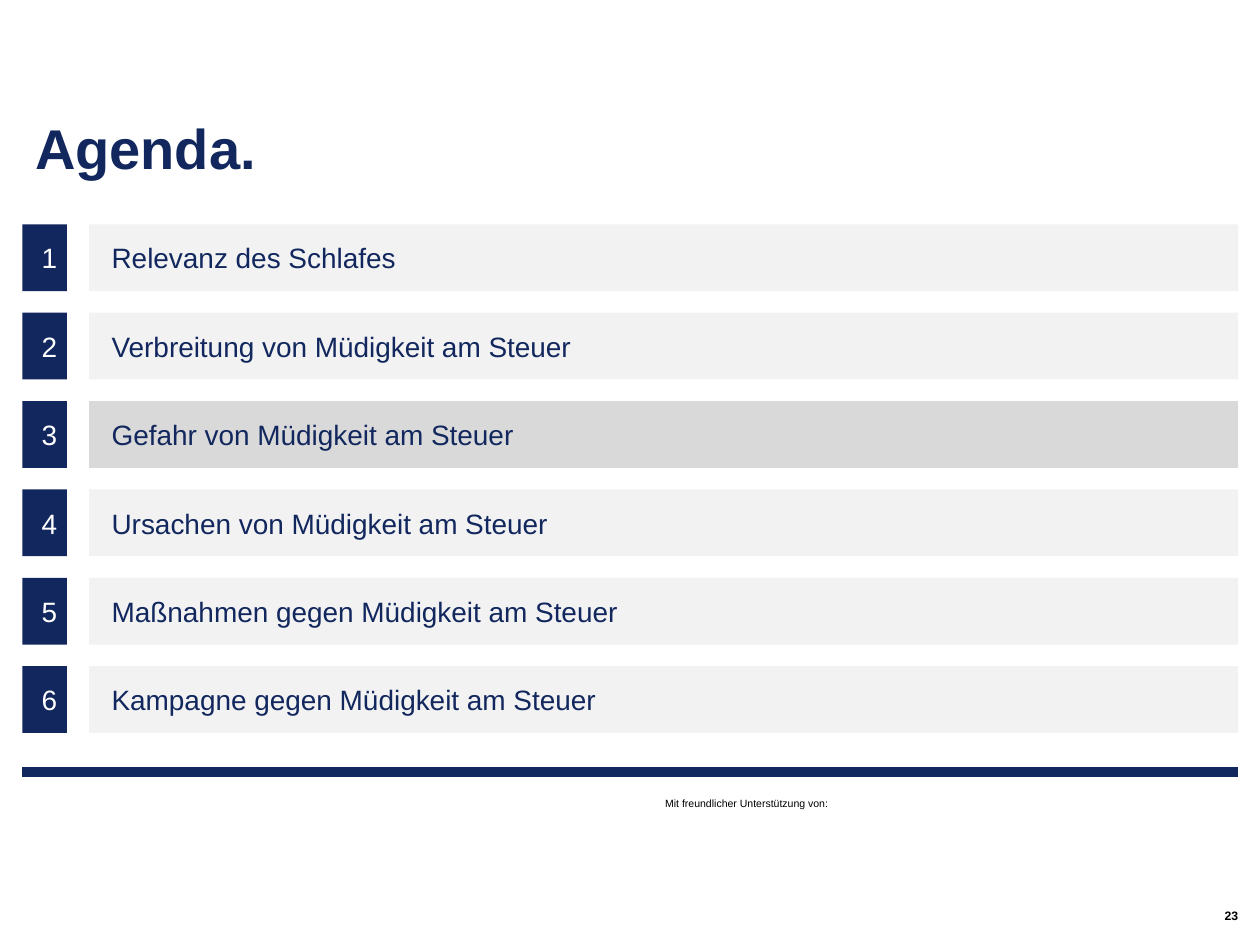
"""Build the agenda slide with its third topic highlighted."""

from dataclasses import dataclass

from lxml.etree import SubElement
from pptx import Presentation
from pptx.dml.color import RGBColor
from pptx.enum.shapes import MSO_CONNECTOR, MSO_SHAPE
from pptx.enum.text import MSO_ANCHOR, MSO_AUTO_SIZE, PP_ALIGN
from pptx.oxml.ns import qn
from pptx.util import Pt

TITLE = "Agenda."
TOPICS = [
    "Relevanz des Schlafes",
    "Verbreitung von Müdigkeit am Steuer",
    "Gefahr von Müdigkeit am Steuer",
    "Ursachen von Müdigkeit am Steuer",
    "Maßnahmen gegen Müdigkeit am Steuer",
    "Kampagne gegen Müdigkeit am Steuer",
]
CURRENT_TOPIC = 3
SUPPORT_NOTE = "Mit freundlicher Unterstützung von:"
PAGE_NUMBER = "23"


@dataclass(frozen=True)
class Theme:
    font: str = "Arial"
    navy: RGBColor = RGBColor(0x11, 0x27, 0x5D)
    white: RGBColor = RGBColor(0xFF, 0xFF, 0xFF)
    black: RGBColor = RGBColor(0, 0, 0)
    bar: RGBColor = RGBColor(0xF2, 0xF2, 0xF2)
    current_bar: RGBColor = RGBColor(0xD9, 0xD9, 0xD9)
    title_size: float = 32
    topic_size: float = 16
    note_size: float = 6
    page_size: float = 7


THEME = Theme()
LEFT, RIGHT = 12.8, 707.5
BAR_LEFT, NUMBER_WIDTH = 51, 25.5
FIRST_ROW_TOP, ROW_HEIGHT, ROW_PITCH = 128.2, 38.2, 50.5
RULE_Y, RULE_WIDTH = 441.3, 5.67


def place(shape, left, top, width, height):
    shape.left, shape.top = Pt(left), Pt(top)
    shape.width, shape.height = Pt(width), Pt(height)


def write(shape, text, size, color, align=PP_ALIGN.LEFT, anchor=MSO_ANCHOR.MIDDLE,
          bold=False, side=0, edge=0):
    frame = shape.text_frame
    frame.auto_size = MSO_AUTO_SIZE.NONE
    frame.word_wrap = True
    frame.vertical_anchor = anchor
    frame.margin_left = frame.margin_right = Pt(side)
    frame.margin_top = frame.margin_bottom = Pt(edge)
    paragraph = frame.paragraphs[0]
    paragraph.text = text
    paragraph.alignment = align
    paragraph.font.name = THEME.font
    paragraph.font.size = Pt(size)
    paragraph.font.bold = bold
    paragraph.font.color.rgb = color
    return paragraph


def add_box(slide, left, top, width, fill):
    shape = slide.shapes.add_shape(
        MSO_SHAPE.RECTANGLE, Pt(left), Pt(top), Pt(width), Pt(ROW_HEIGHT))
    shape.shadow.inherit = False
    shape.fill.solid()
    shape.fill.fore_color.rgb = fill
    shape.line.fill.background()
    return shape


def add_topic(slide, number, topic):
    top = FIRST_ROW_TOP + (number - 1) * ROW_PITCH
    number_box = add_box(slide, LEFT, top, NUMBER_WIDTH, THEME.navy)
    write(number_box, str(number), THEME.topic_size, THEME.white,
          align=PP_ALIGN.RIGHT, side=5.7, edge=3.6)
    fill = THEME.current_bar if number == CURRENT_TOPIC else THEME.bar
    bar = add_box(slide, BAR_LEFT, top, RIGHT - BAR_LEFT, fill)
    write(bar, topic, THEME.topic_size, THEME.navy, side=12.8, edge=3.6)


def add_rule(slide):
    rule = slide.shapes.add_connector(
        MSO_CONNECTOR.STRAIGHT, Pt(LEFT), Pt(RULE_Y), Pt(RIGHT), Pt(RULE_Y))
    rule.line.color.rgb = THEME.navy
    rule.line.width = Pt(RULE_WIDTH)
    SubElement(rule._element.spPr, qn("a:effectLst"))


def main():
    presentation = Presentation()
    presentation.slide_width, presentation.slide_height = Pt(720), Pt(540)
    slide = presentation.slides.add_slide(presentation.slide_layouts[5])

    title = slide.shapes.title
    place(title, LEFT, 28, RIGHT - LEFT, 75.6)
    heading = write(title, TITLE, THEME.title_size, THEME.navy,
                    anchor=MSO_ANCHOR.BOTTOM, bold=True, side=7.2)
    heading.line_spacing = 0.9

    add_rule(slide)
    note = slide.shapes.add_textbox(Pt(373), Pt(452), Pt(146), Pt(14.4))
    write(note, SUPPORT_NOTE, THEME.note_size, THEME.black,
          anchor=MSO_ANCHOR.TOP, side=7.2, edge=3.6)
    page = slide.shapes.add_textbox(Pt(464.5), Pt(517.7), Pt(RIGHT - 464.5), Pt(11.5))
    write(page, PAGE_NUMBER, THEME.page_size, THEME.black,
          align=PP_ALIGN.RIGHT, bold=True)

    for number, topic in enumerate(TOPICS, start=1):
        add_topic(slide, number, topic)

    presentation.save("out.pptx")


if __name__ == "__main__":
    main()
